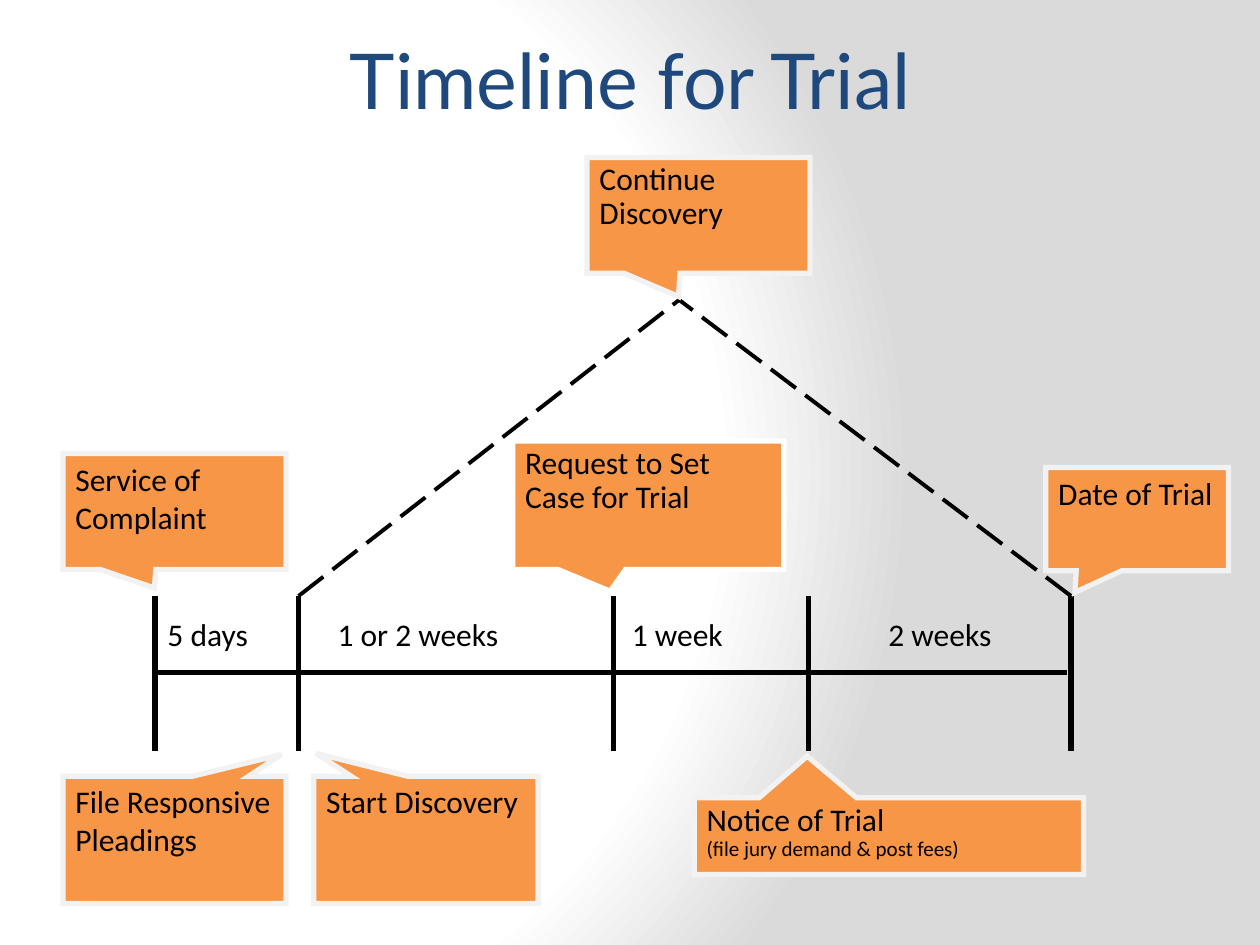
from pptx import Presentation
from pptx import util as u
from pptx.dml.color import RGBColor
from pptx.enum import dml, shapes, text
from pptx.oxml import parse_xml
from pptx.oxml.ns import nsdecls, qn

BLACK = RGBColor(0x00, 0x00, 0x00)
WHITE = RGBColor(0xFF, 0xFF, 0xFF)
PALE = RGBColor(0xF2, 0xF2, 0xF2)
GREY = RGBColor(0xDA, 0xDA, 0xDA)
ORANGE = RGBColor(0xF7, 0x96, 0x46)
NAVY = RGBColor(0x1F, 0x49, 0x7D)

TICKS = (88.6, 170.6, 350.6, 462.2, 612)
TICK_TOP, AXIS, TICK_BOTTOM = 340.6, 384.5, 429.1
APEX = (388.1, 171.4)

PERIODS = (
    ("5 days", TICKS[0], 90, text.PP_ALIGN.LEFT),
    ("1 or 2 weeks", 185.8, 149.8, text.PP_ALIGN.LEFT),
    (" 1 week", 349.9, 104.4, text.PP_ALIGN.LEFT),
    ("2 weeks", TICKS[3], 149.8, text.PP_ALIGN.CENTER),
)

CALLOUTS = (
    ([("Service of Complaint", 18)], (36, 259.2, 127.4, 66.2), (-0.09, 0.66), 1, PALE),
    ([("File Responsive Pleadings", 18)], (36, 443.5, 127.4, 72.7), (0.48, -0.67), 1, PALE),
    ([("Request to Set Case for Trial", 18)], (293, 252, 154.8, 73.4), (-0.14, 0.67), 0.9, WHITE),
    ([("Start Discovery", 18)], (179.3, 443.5, 128.2, 72.7), (-0.49, -0.68), 1, PALE),
    ([("Notice of Trial", 18), ("(file jury demand & post fees)", 12)],
     (396.7, 455.8, 222.5, 43.9), (-0.21, -1.04), 0.9, PALE),
    ([("Date of Trial", 18)], (597.6, 267.1, 104.4, 59), (-0.34, 0.71), 1, PALE),
    ([("Continue Discovery", 18)], (335.5, 90, 127.4, 66.2), (-0.09, 0.7), 0.9, PALE),
)


def set_background(slide):
    slide.background.fill.gradient()
    gradient = slide.element.find(".//" + qn("a:gradFill"))
    stops = "".join(
        f'<a:gs pos="{position}"><a:srgbClr val="{color}"/></a:gs>'
        for position, color in ((0, WHITE), (75000, WHITE), (100000, GREY))
    )
    gradient.getparent().replace(gradient, parse_xml(
        f'<a:gradFill {nsdecls("a")} rotWithShape="1"><a:gsLst>{stops}</a:gsLst>'
        '<a:path path="circle"><a:fillToRect l="20000" t="50000" r="100000" b="50000"/>'
        '</a:path></a:gradFill>'))


def add_line(slide, start, end, width=3, dash=None):
    line = slide.shapes.add_connector(
        shapes.MSO_CONNECTOR.STRAIGHT, *map(u.Pt, start + end))
    line.line.color.rgb = BLACK
    line.line.width = u.Pt(width)
    if dash:
        line.line.dash_style = dash
    line._element.spPr.append(parse_xml(f'<a:effectLst {nsdecls("a")}/>'))


def write_paragraphs(shape, lines, font_name="Calibri", color=BLACK,
                     alignment=text.PP_ALIGN.LEFT, spacing=1):
    frame = shape.text_frame
    frame.word_wrap = True
    frame.vertical_anchor = text.MSO_ANCHOR.TOP
    frame.text = "\n".join(wording for wording, size in lines)
    for paragraph, (wording, size) in zip(frame.paragraphs, lines):
        paragraph.alignment = alignment
        paragraph.line_spacing = spacing
        paragraph.font.name = font_name
        paragraph.font.size = u.Pt(size)
        paragraph.font.color.rgb = color


def add_label(slide, lines, box, **style):
    label = slide.shapes.add_textbox(*map(u.Pt, box))
    write_paragraphs(label, lines, **style)
    label.text_frame.auto_size = text.MSO_AUTO_SIZE.SHAPE_TO_FIT_TEXT


def add_callout(slide, lines, box, tip, spacing, border):
    callout = slide.shapes.add_shape(
        shapes.MSO_SHAPE.RECTANGULAR_CALLOUT, *map(u.Pt, box))
    callout.adjustments[0], callout.adjustments[1] = tip
    callout.shadow.inherit = False
    callout.fill.solid()
    callout.fill.fore_color.rgb = ORANGE
    callout.line.color.rgb = border
    callout.line.width = u.Pt(3)
    callout.line._ln.append(parse_xml(f'<a:miter {nsdecls("a")} lim="800000"/>'))
    write_paragraphs(callout, lines, spacing=spacing)


def main():
    presentation = Presentation()
    presentation.slide_width = u.Pt(720)
    presentation.slide_height = u.Pt(540)
    slide = presentation.slides.add_slide(presentation.slide_layouts[6])
    set_background(slide)

    for x in (TICKS[1], TICKS[-1]):
        add_line(slide, (x, TICK_TOP), APEX, 2.25, dml.MSO_LINE.LONG_DASH)
    add_line(slide, (TICKS[0], AXIS), (609.8, AXIS))
    for x in TICKS:
        add_line(slide, (x, TICK_TOP), (x, TICK_BOTTOM))
    for wording, left, width, alignment in PERIODS:
        add_label(slide, [(wording, 18)], (left, 347.8, width, 28.8), alignment=alignment)
    for callout in CALLOUTS:
        add_callout(slide, *callout)
    add_label(slide, [("Timeline for Trial", 44)], (12.2, 25.2, 696.2, 51.8),
              font_name="Lato", color=NAVY, alignment=text.PP_ALIGN.CENTER, spacing=0.8)

    presentation.save("out.pptx")


if __name__ == "__main__":
    main()
